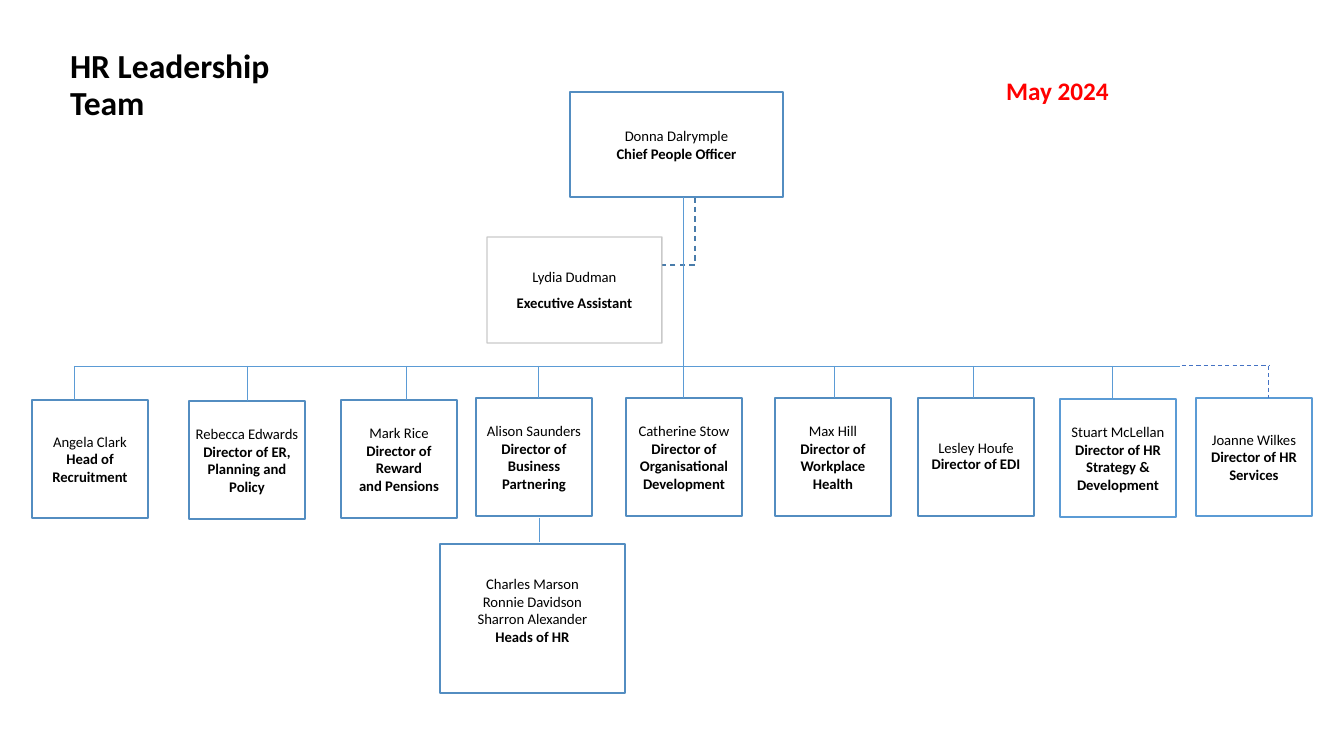
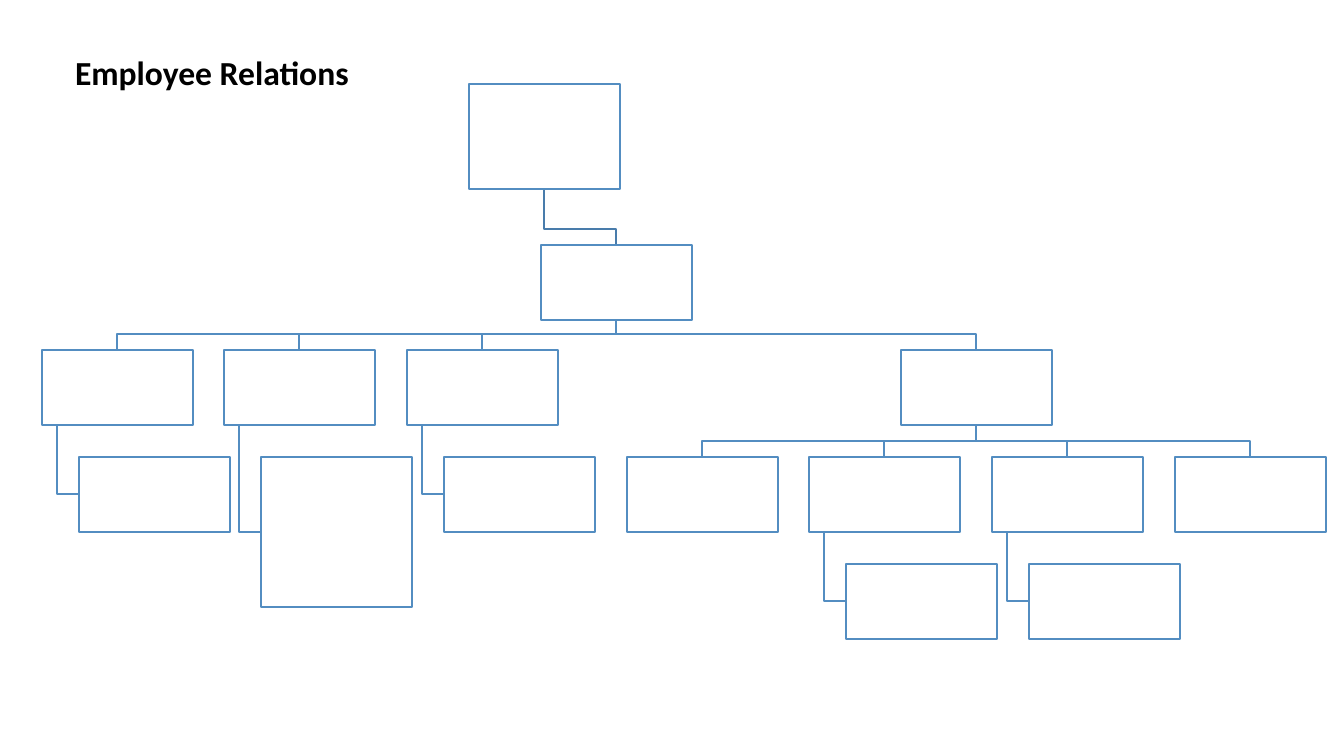
import pptx
import pptx.dml.color
import pptx.enum.dml
import pptx.enum.shapes
import pptx.enum.text
import pptx.oxml
import pptx.oxml.ns
import pptx.util

RGB = pptx.dml.color.RGBColor.from_string
PT = pptx.util.Pt
TEXT = pptx.enum.text
SHAPE = pptx.enum.shapes
DASH = pptx.enum.dml.MSO_LINE.DASH
PX = 12192000 / 1344

THEME = {
    "font": "Calibri",
    "white": RGB("FFFFFF"),
    "black": RGB("000000"),
    "red": RGB("FF0000"),
    "title": PT(24),
    "date": PT(18),
    "body": PT(10.5),
}
LINES = {
    "box": {"color": RGB("538DC1"), "width": PT(1)},
    "bright": {"color": RGB("5B9BD5"), "width": PT(1)},
    "grey": {"color": RGB("A6A6A6"), "width": PT(1), "alpha": 60},
    "lead": {"color": RGB("497CAB"), "width": PT(1)},
    "assist": {"color": RGB("497CAB"), "width": PT(1), "dash": DASH},
    "tree": {"color": RGB("5B9BD5"), "width": PT(0.5)},
    "dotted": {"color": RGB("4472C4"), "width": PT(0.75), "dash": DASH},
}
TIGHT = (1, 1, 1, 1)
ROOMY = (10, 5, 10, 5)

TEAM_TITLE = ("HR Leadership Team", (60, 46, 290, 80))
DATE = ("May 2024", (996, 70, 231, 40))
ASSIST_LINK = [(695, 197), (695, 265), (662, 265)]
BAR_Y = 366
DIRECTOR_SIZE = (116, 118)

DIRECTORS = [
    (32, 400, 74, ["Angela Clark"], ["Head of Recruitment"]),
    (189, 401, 247, ["Rebecca Edwards"], ["Director of ER,", "Planning and", "Policy"]),
    (341, 400, 406, ["Mark Rice"], ["Director of", "Reward", "and Pensions"]),
    (476, 398, 538, ["Alison Saunders"], ["Director of", "Business Partnering"]),
    (626, 398, 683, ["Catherine Stow"], ["Director of", "Organisational Development"]),
    (775, 398, 834, ["Max Hill"], ["Director of", "Workplace", "Health"]),
    (918, 398, 973, ["Lesley Houfe"], ["Director of EDI"], {"paragraph": {"line_spacing": 0.9}}),
    (1060, 399, 1112, ["Stuart McLellan"], ["Director of HR Strategy & Development"],
     {"line": "bright", "insets": ROOMY}),
    (1196, 398, 1269, ["Joanne Wilkes"], ["Director of HR Services"],
     {"line": "bright", "insets": ROOMY}),
]
OTHER_BOXES = [
    ((570, 92, 213, 105), ["Donna Dalrymple"], ["Chief People Officer"], {}),
    ((487, 237, 175, 106), ["Lydia Dudman"], ["Executive Assistant"],
     {"line": "grey", "paragraph": {"space_after": PT(6)}}),
    ((440, 544, 185, 149), ["Charles Marson", "Ronnie Davidson", "Sharron Alexander"],
     ["Heads of HR"], {"insets": (1, 1, 1, 18)}),
]
TEAM_LINES = [
    ((683, 197), (683, BAR_Y), "tree"),
    ((74, BAR_Y), (1180, BAR_Y), "tree"),
    ((1182, BAR_Y), (1269, BAR_Y), "dotted"),
    ((539, 518), (539, 542), "tree"),
]

RELATIONS_TITLE = ("Employee Relations", (65, 35, 423, 80))
HANG = 37
STEM = 15
BOX_W, BOX_H = 151, 75
COLS = [79 + 548 * k // 3 for k in range(7)]
ROWS = [350 + 107 * k for k in range(3)]
NODES = {
    "lead": (469, 84, 105, None),
    "manager": (541, 245, BOX_H, "lead"),
    "team 1": (COLS[0] - HANG, ROWS[0], BOX_H, "manager"),
    "team 2": (COLS[1] - HANG, ROWS[0], BOX_H, "manager"),
    "team 3": (COLS[2] - HANG, ROWS[0], BOX_H, "manager"),
    "team 4": ((COLS[3] + COLS[6]) // 2, ROWS[0], BOX_H, "manager"),
    "staff 1": (COLS[0], ROWS[1], BOX_H, "team 1"),
    "staff 2": (COLS[1], ROWS[1], 2 * BOX_H, "team 2"),
    "staff 3": (COLS[2], ROWS[1], BOX_H, "team 3"),
    "group 1": (COLS[3], ROWS[1], BOX_H, "team 4"),
    "group 2": (COLS[4], ROWS[1], BOX_H, "team 4"),
    "group 3": (COLS[5], ROWS[1], BOX_H, "team 4"),
    "group 4": (COLS[6], ROWS[1], BOX_H, "team 4"),
    "staff 4": (COLS[4] + HANG, ROWS[2], BOX_H, "group 2"),
    "staff 5": (COLS[5] + HANG, ROWS[2], BOX_H, "group 3"),
}


def emu(*lengths):
    return [round(n * PX) for n in lengths]


def apply(obj, values):
    for name, value in values.items():
        setattr(obj, name, value)


def set_line(line, style):
    line.color.rgb = style["color"]
    line.width = style["width"]
    if "dash" in style:
        line.dash_style = style["dash"]
    if "alpha" in style:
        color = line._ln.find(".//" + pptx.oxml.ns.qn("a:srgbClr"))
        alpha = pptx.oxml.parse_xml(
            '<a:alpha %s val="%d"/>' % (pptx.oxml.ns.nsdecls("a"), style["alpha"] * 1000))
        color.append(alpha)


def set_frame(tf, insets, anchor):
    left, top, right, bottom = emu(*insets)
    apply(tf, {"margin_left": left, "margin_top": top, "margin_right": right,
               "margin_bottom": bottom, "word_wrap": True, "vertical_anchor": anchor,
               "auto_size": TEXT.MSO_AUTO_SIZE.NONE})


def write(p, text, size, bold, color="black", **paragraph):
    apply(p, paragraph)
    r = p.add_run()
    r.text = text
    apply(r.font, {"name": THEME["font"], "size": size, "bold": bold})
    r.font.color.rgb = THEME[color]


def add_slide(prs, title, place):
    s = prs.slides.add_slide(prs.slide_layouts[5])
    sp = s.shapes.title
    apply(sp, dict(zip(("left", "top", "width", "height"), emu(*place))))
    set_frame(sp.text_frame, ROOMY, TEXT.MSO_ANCHOR.MIDDLE)
    write(sp.text_frame.paragraphs[0], title, THEME["title"], True,
          alignment=TEXT.PP_ALIGN.LEFT, line_spacing=0.9)
    return s


def add_box(s, place, names=(), roles=(), line="box", insets=TIGHT, paragraph=None):
    sp = s.shapes.add_shape(SHAPE.MSO_SHAPE.RECTANGLE, *emu(*place))
    sp.shadow.inherit = False
    sp.fill.solid()
    sp.fill.fore_color.rgb = THEME["white"]
    set_line(sp.line, LINES[line])
    tf = sp.text_frame
    set_frame(tf, insets, TEXT.MSO_ANCHOR.MIDDLE)
    rows = [(text, False) for text in names] + [(text, True) for text in roles]
    for i, (text, bold) in enumerate(rows):
        p = tf.add_paragraph() if i else tf.paragraphs[0]
        write(p, text, THEME["body"], bold,
              alignment=TEXT.PP_ALIGN.CENTER, **(paragraph or {}))


def add_path(s, points, line):
    builder = s.shapes.build_freeform(*points[0], scale=PX)
    builder.add_line_segments(points[1:], close=False)
    sp = builder.convert_to_shape()
    sp.shadow.inherit = False
    sp.fill.background()
    set_line(sp.line, LINES[line])


def add_line(s, start, end, line):
    c = s.shapes.add_connector(SHAPE.MSO_CONNECTOR.STRAIGHT, *emu(*start, *end))
    set_line(c.line, LINES[line])
    c._element.spPr.append(
        pptx.oxml.parse_xml("<a:effectLst %s/>" % pptx.oxml.ns.nsdecls("a")))


def build_team(prs):
    s = add_slide(prs, *TEAM_TITLE)
    add_path(s, ASSIST_LINK, "assist")
    for place, names, roles, options in OTHER_BOXES:
        add_box(s, place, names, roles, **options)
    for x, y, drop, names, roles, *options in DIRECTORS:
        add_box(s, (x, y, *DIRECTOR_SIZE), names, roles, **(options[0] if options else {}))
        style = "dotted" if drop == DIRECTORS[-1][2] else "tree"
        add_line(s, (drop, BAR_Y), (drop, y), style)
    for start, end, style in TEAM_LINES:
        add_line(s, start, end, style)
    text, place = DATE
    tf = s.shapes.add_textbox(*emu(*place)).text_frame
    set_frame(tf, ROOMY, TEXT.MSO_ANCHOR.TOP)
    write(tf.paragraphs[0], text, THEME["date"], True, "red")


def link_points(parent, child):
    px, py, ph, _ = parent
    x, y, h, _ = child
    bottom = py + ph
    if x - px == HANG:
        stem, middle = px + STEM, y + h // 2
        return [(stem, bottom), (stem, middle), (x, middle)]
    start, end, bend = px + BOX_W // 2, x + BOX_W // 2, y - 16
    return [(start, bottom), (start, bend), (end, bend), (end, y)]


def build_relations(prs):
    s = add_slide(prs, *RELATIONS_TITLE)
    for node in NODES.values():
        parent = node[3]
        if parent:
            add_path(s, link_points(NODES[parent], node), "lead" if parent == "lead" else "box")
    for x, y, h, _ in NODES.values():
        add_box(s, (x, y, BOX_W, h))


def main():
    prs = pptx.Presentation()
    prs.slide_width, prs.slide_height = emu(1344, 756)
    build_team(prs)
    build_relations(prs)
    prs.save("out.pptx")


if __name__ == "__main__":
    main()
